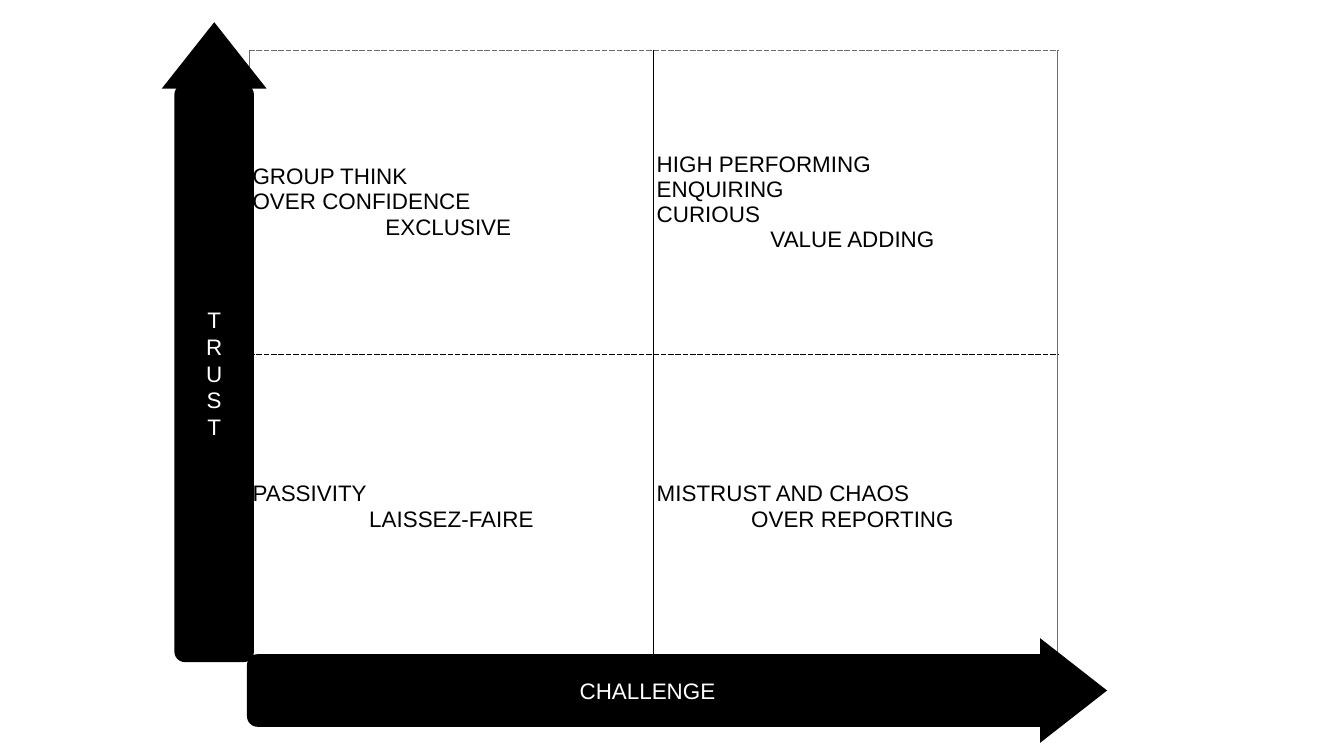
from lxml import etree
from pptx import Presentation
from pptx.dml.color import RGBColor
from pptx.enum.shapes import MSO_SHAPE as SHAPE
from pptx.enum.text import MSO_ANCHOR as ANCHOR, PP_ALIGN as ALIGN
from pptx.oxml import parse_xml
from pptx.oxml.ns import nsdecls
from pptx.util import Cm, Pt

COLORS = {"black": "000000", "white": "FFFFFF", "outer": "6C6C6C"}
INSET = Cm(0.16)
QUADRANTS = [
    [["GROUP THINK ", "OVER CONFIDENCE ", "EXCLUSIVE "],
     ["HIGH PERFORMING ", "ENQUIRING", "CURIOUS", "VALUE ADDING "]],
    [["PASSIVITY ", "LAISSEZ-FAIRE"],
     ["MISTRUST AND CHAOS", "OVER REPORTING "]],
]


def write_lines(tf, lines, color, spacing, lead_align):
    """Write one paragraph per line; the last line is always centred."""
    for i, text in enumerate(lines):
        p = tf.paragraphs[0] if i == 0 else tf.add_paragraph()
        p.alignment = ALIGN.CENTER if i == len(lines) - 1 else lead_align
        p.line_spacing = Pt(spacing)
        r = p.add_run()
        r.text = text
        r.font.name, r.font.size = "Arial", Pt(32)
        r.font.color.rgb = RGBColor.from_string(COLORS[color])


def paint_black(sp):
    sp.shadow.inherit = False
    sp.fill.solid()
    sp.fill.fore_color.rgb = RGBColor.from_string(COLORS["black"])
    sp.line.fill.background()


prs = Presentation()
prs.slide_width, prs.slide_height = Cm(67.74), Cm(38.1)
s = prs.slides.add_slide(prs.slide_layouts[6])

# Quadrant table
table = s.shapes.add_table(2, 2, Cm(12.57), Cm(2.51), Cm(40.74), Cm(30.7)).table
table.first_row = table.horz_banding = False
for row in table.rows:
    row.height = Cm(15.35)
for col in table.columns:
    col.width = Cm(20.37)

for i, row in enumerate(QUADRANTS):
    for j, lines in enumerate(row):
        cell = table.cell(i, j)
        cell.fill.background()
        cell.vertical_anchor = ANCHOR.MIDDLE
        cell.margin_left = cell.margin_right = INSET
        cell.margin_top = cell.margin_bottom = INSET
        write_lines(cell.text_frame, lines, "black", 36, ALIGN.LEFT)
        # Inner edges are black, outer edges grey; horizontal edges are dashed
        edges = [("L", j == 0, "solid"), ("R", j == 1, "solid"),
                 ("T", i == 0, "dash"), ("B", i == 1, "dash")]
        tc_pr = cell._tc.get_or_add_tcPr()
        for n, (side, is_outer, dash) in enumerate(edges):
            color = COLORS["outer" if is_outer else "black"]
            tc_pr.insert(n, parse_xml(
                f'<a:ln{side} {nsdecls("a")} w="12700"><a:solidFill>'
                f'<a:srgbClr val="{color}"/></a:solidFill>'
                f'<a:prstDash val="{dash}"/></a:ln{side}>'))

# Axis bars: left, top, width, height, corner, lines
bars = [
    (8.79, 4.24, 4.01, 29.13, 0.132, list("TRUST")),
    (12.45, 32.97, 40.69, 3.66, 0.145, ["CHALLENGE "]),
]
for x, y, w, h, corner, lines in bars:
    sp = s.shapes.add_shape(SHAPE.ROUNDED_RECTANGLE, Cm(x), Cm(y), Cm(w), Cm(h))
    sp.adjustments[0] = corner
    paint_black(sp)
    tf = sp.text_frame
    tf.word_wrap = True
    tf.vertical_anchor = ANCHOR.MIDDLE
    tf.margin_left = tf.margin_right = tf.margin_top = tf.margin_bottom = INSET
    write_lines(tf, lines, "white", 38.2, ALIGN.CENTER)

# Arrowheads of the two axes
fb = s.shapes.build_freeform(Cm(10.8), Cm(1.12))
fb.add_line_segments([(Cm(13.44), Cm(4.47)), (Cm(8.15), Cm(4.47))], close=True)
paint_black(fb.convert_to_shape())

head = s.shapes.add_shape(SHAPE.RIGHT_ARROW, Cm(50.52), Cm(32.16), Cm(5.28), Cm(5.28))
head.adjustments[0], head.adjustments[1] = 0.32, 0.64
paint_black(head)

prs.save("out.pptx")
